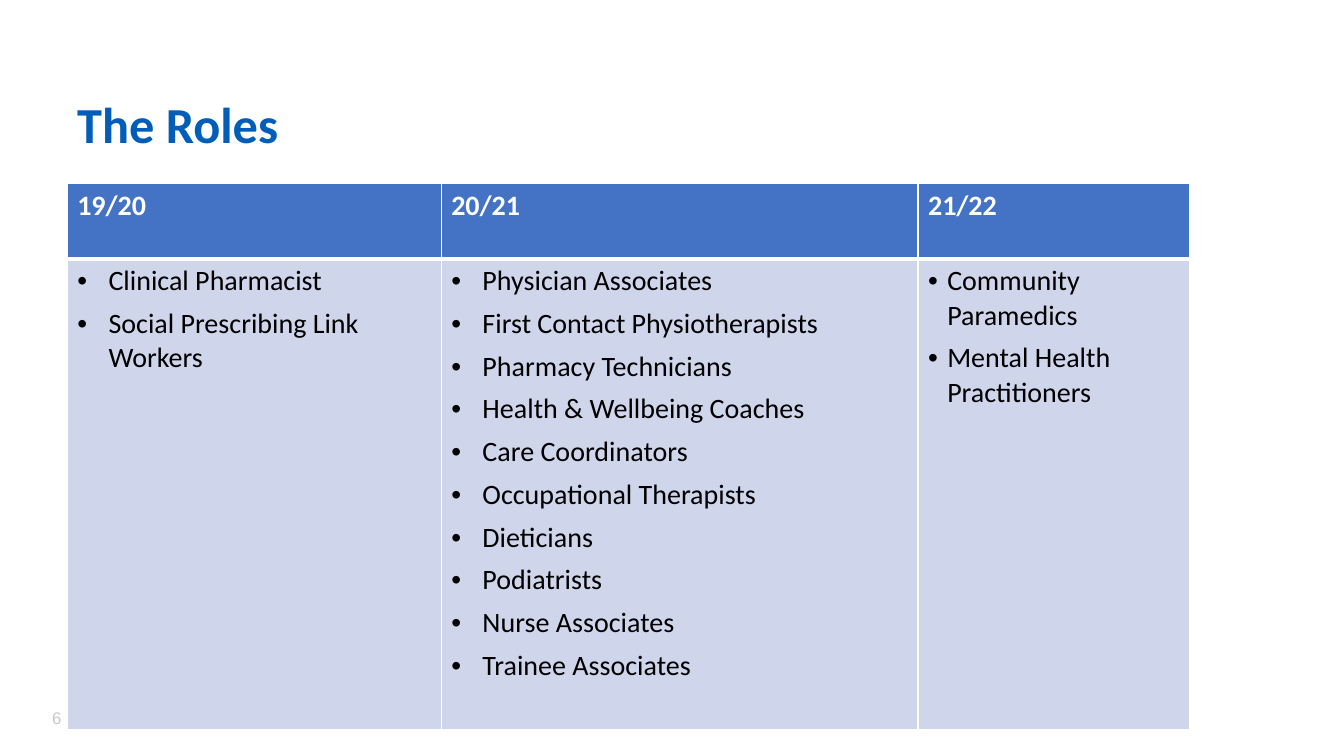
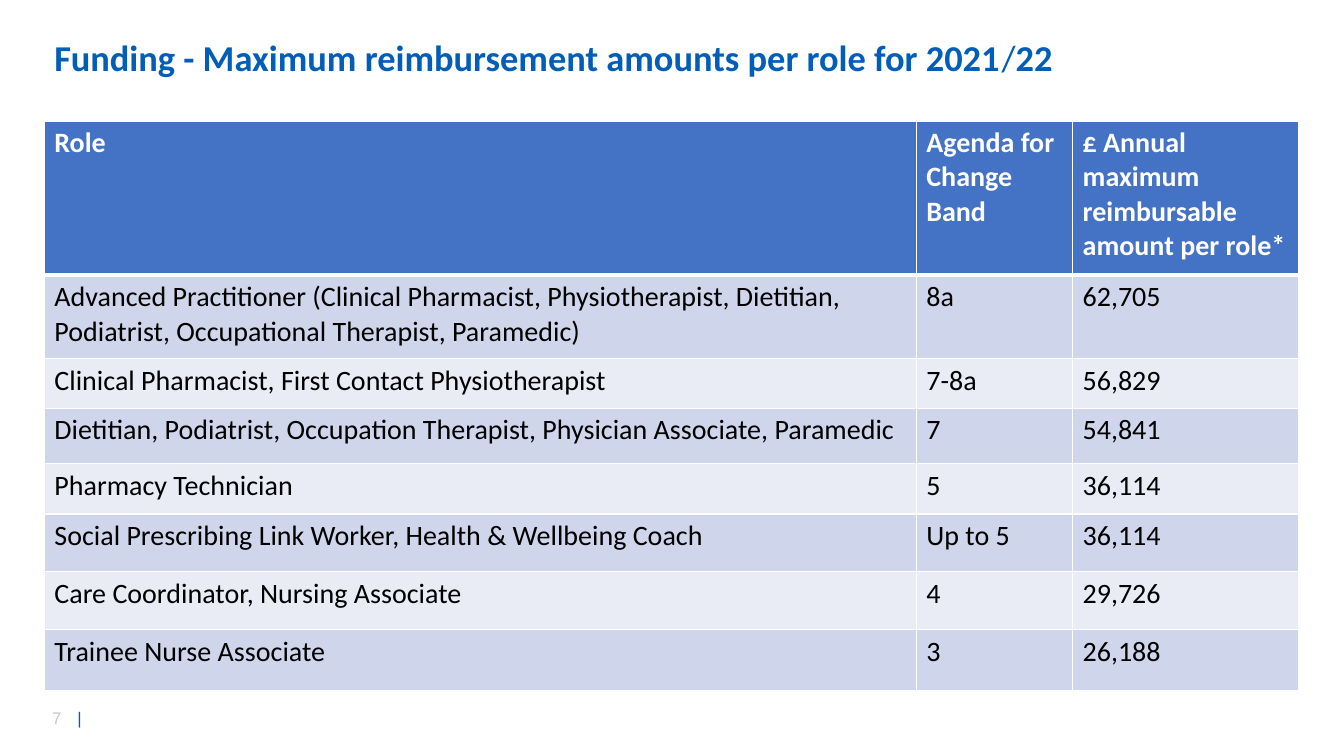
from dataclasses import dataclass

from lxml.etree import SubElement
from pptx import Presentation
from pptx.dml.color import RGBColor as Rgb
from pptx.enum.text import MSO_ANCHOR as Anchor
from pptx.oxml.ns import qn
from pptx.util import Emu, Inches, Pt


@dataclass(frozen=True)
class Theme:
    blue: str = "005EB8"
    grey: str = "C9C9C9"
    white: str = "FFFFFF"
    black: str = "000000"
    header: str = "4472C4"
    bands: tuple[str, ...] = ("CFD5EA", "E9EBF5")
    text_font: str = "Calibri"
    footer_font: str = "Arial"
    table_size: int = 20
    footer_size: int = 12
    rule: int = 1
    header_rule: int = 3


@dataclass(frozen=True)
class Area:
    """Position and size in a grid of 100 columns and 100 rows per slide."""
    left: float
    top: float
    width: float
    height: float


@dataclass(frozen=True)
class Span:
    text: str
    bold: bool = True


@dataclass(frozen=True)
class Title:
    area: Area
    size: int
    spans: tuple[Span, ...]


@dataclass(frozen=True)
class Bullets:
    items: tuple[str, ...]
    indent: float = 0.31


@dataclass(frozen=True)
class Grid:
    left: float
    top: float
    columns: tuple[float, ...]
    rows: tuple[float, ...]
    cells: tuple[tuple[str | Bullets, ...], ...]


@dataclass(frozen=True)
class PageContent:
    number: int
    title: Title
    grid: Grid


THEME = Theme()
SLIDE_WIDTH, SLIDE_HEIGHT = Inches(13.333), Inches(7.5)
FOOTER = Area(3.15, 92.93, 7.05, 4)
FOOTER_TAB = Inches(0.25)

PAGES = (
    PageContent(
        6,
        Title(Area(5, 12.4, 71.85, 8.93), 36, (Span("The Roles"),)),
        Grid(5, 24.27, (27.83, 35.48, 20.18), (10, 62.2), (
            ("19/20", "20/21", "21/22"),
            (
                Bullets(("Clinical Pharmacist", "Social Prescribing Link Workers")),
                Bullets((
                    "Physician Associates", "First Contact Physiotherapists",
                    "Pharmacy Technicians", "Health & Wellbeing Coaches",
                    "Care Coordinators", "Occupational Therapists", "Dieticians",
                    "Podiatrists", "Nurse Associates", "Trainee Associates",
                )),
                Bullets(("Community Paramedics", "Mental Health Practitioners"), 0.19),
            ),
        )),
    ),
    PageContent(
        7,
        Title(Area(3.3, 3.47, 77.8, 8.93), 26, (
            Span("Funding - Maximum reimbursement amounts per role for 2021"),
            Span("/", bold=False),
            Span("22"),
        )),
        Grid(
            3.3, 16, (64.88, 11.63, 16.8),
            (20.4, 11.07, 6.53, 7.33, 6.67, 7.6, 7.73, 8), (
                ("Role", "Agenda for Change Band",
                 "£ Annual maximum reimbursable amount per role*"),
                ("Advanced Practitioner (Clinical Pharmacist, Physiotherapist, Dietitian, "
                 "Podiatrist, Occupational Therapist, Paramedic)", "8a", "62,705"),
                ("Clinical Pharmacist, First Contact Physiotherapist", "7-8a", "56,829"),
                ("Dietitian, Podiatrist, Occupation Therapist, Physician Associate, Paramedic",
                 "7", "54,841"),
                ("Pharmacy Technician", "5", "36,114"),
                ("Social Prescribing Link Worker, Health & Wellbeing Coach",
                 "Up to 5", "36,114"),
                ("Care Coordinator, Nursing Associate", "4", "29,726"),
                ("Trainee Nurse Associate", "3", "26,188"),
            ),
        ),
    ),
)


def across(columns: float) -> Emu:
    return Emu(round(SLIDE_WIDTH * columns / 100))


def down(rows: float) -> Emu:
    return Emu(round(SLIDE_HEIGHT * rows / 100))


def set_font(font, name: str, size: int, colour: str) -> None:
    font.name, font.size = name, Pt(size)
    font.color.rgb = Rgb.from_string(colour)


def add_text_frame(page, area: Area):
    box = page.shapes.add_textbox(across(area.left), down(area.top),
                                  across(area.width), down(area.height))
    box.text_frame.word_wrap = True
    return box.text_frame


def add_title(page, title: Title) -> None:
    frame = add_text_frame(page, title.area)
    frame.vertical_anchor = Anchor.MIDDLE
    para = frame.paragraphs[0]
    para.line_spacing = 0.9
    set_font(para.font, THEME.text_font, title.size, THEME.blue)
    for span in title.spans:
        run = para.add_run()
        run.text, run.font.bold = span.text, span.bold


def add_footer(page, number: int) -> None:
    para = add_text_frame(page, FOOTER).paragraphs[0]
    tabs = SubElement(para._p.get_or_add_pPr(), qn("a:tabLst"))
    SubElement(tabs, qn("a:tab"), pos=str(FOOTER_TAB), algn="l")
    for text, colour in ((f"{number}\t", THEME.grey), ("|", THEME.blue)):
        run = para.add_run()
        run.text = text
        set_font(run.font, THEME.footer_font, THEME.footer_size, colour)


def add_bullet(para, indent: float) -> None:
    para.space_after = Pt(6)
    properties = para._p.get_or_add_pPr()
    properties.set("marL", str(Inches(indent)))
    properties.set("indent", str(-Inches(indent)))
    SubElement(properties, qn("a:buFont"), typeface="Arial")
    SubElement(properties, qn("a:buChar"), char="•")


def set_borders(cell, row: int) -> None:
    """Draw white rules, with a heavier one between header and body."""
    widths = {"L": THEME.rule, "R": THEME.rule,
              "T": THEME.header_rule if row == 1 else THEME.rule,
              "B": THEME.header_rule if row == 0 else THEME.rule}
    properties = cell._tc.get_or_add_tcPr()
    for side, width in widths.items():
        line = SubElement(properties, qn(f"a:ln{side}"), w=str(Pt(width)))
        fill = SubElement(line, qn("a:solidFill"))
        SubElement(fill, qn("a:srgbClr"), val=THEME.white)


def fill_cell(cell, content: str | Bullets, row: int) -> None:
    is_header = row == 0
    set_borders(cell, row)
    cell.fill.solid()
    band = THEME.header if is_header else THEME.bands[(row - 1) % len(THEME.bands)]
    cell.fill.fore_color.rgb = Rgb.from_string(band)
    bulleted = isinstance(content, Bullets)
    cell.text = "\n".join(content.items) if bulleted else content
    for para in cell.text_frame.paragraphs:
        if bulleted:
            add_bullet(para, content.indent)
        set_font(para.font, THEME.text_font, THEME.table_size,
                 THEME.white if is_header else THEME.black)
        para.font.bold = is_header


def add_grid(page, grid: Grid) -> None:
    table = page.shapes.add_table(
        len(grid.rows), len(grid.columns), across(grid.left), down(grid.top),
        across(sum(grid.columns)), down(sum(grid.rows))).table
    table.horz_banding = False
    for column, width in zip(table.columns, grid.columns):
        column.width = across(width)
    for index, (row, height) in enumerate(zip(table.rows, grid.rows)):
        row.height = down(height)
        for cell, content in zip(row.cells, grid.cells[index]):
            fill_cell(cell, content, index)


def main() -> None:
    deck = Presentation()
    deck.slide_width, deck.slide_height = SLIDE_WIDTH, SLIDE_HEIGHT
    for content in PAGES:
        page = deck.slides.add_slide(deck.slide_layouts[6])
        add_footer(page, content.number)
        add_title(page, content.title)
        add_grid(page, content.grid)
    deck.save("out.pptx")


if __name__ == "__main__":
    main()
